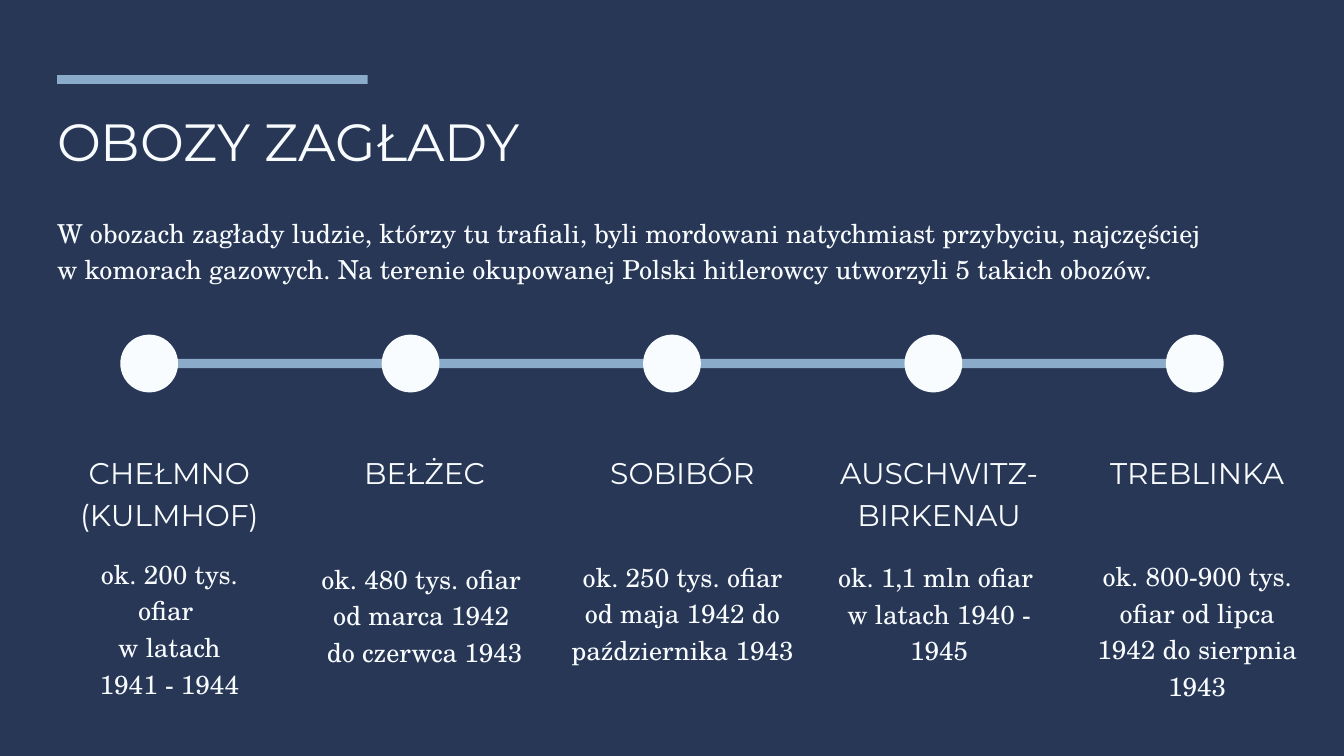
from pptx import Presentation
from pptx.dml.color import RGBColor
from pptx.enum.shapes import MSO_SHAPE
from pptx.enum.text import MSO_ANCHOR, MSO_AUTO_SIZE, PP_ALIGN
from pptx.util import Inches, Pt

RECTANGLE = MSO_SHAPE.RECTANGLE
OVAL = MSO_SHAPE.OVAL
TOP = MSO_ANCHOR.TOP
NO_AUTOFIT = MSO_AUTO_SIZE.NONE
LEFT = PP_ALIGN.LEFT
CENTER = PP_ALIGN.CENTER

COLOURS = {"navy": "273755", "white": "F9FCFF", "blue": "8AABCA"}
HEADING_FONT = "Montserrat"
BODY_FONT = "TeX Gyre Schola"
TITLE_ONLY = 5

MARGIN = 0.85
FIRST_DOT, DOT_STEP, DOT_SIZE = 2.22, 3.89, 0.86
LINE_CENTRE, LINE_HEIGHT = 5.41, 0.14
NAME_TOP = 6.68
DETAIL_SHARE = 0.866

INTRO = [
    "W obozach zagłady ludzie, którzy tu trafiali, byli mordowani natychmiast przybyciu, najczęściej",
    "w komorach gazowych. Na terenie okupowanej Polski hitlerowcy utworzyli 5 takich obozów.",
]

CAMPS = [
    (0.85, 3.34, 8.23, ["CHEŁMNO", "(KULMHOF)"],
     ["ok. 200 tys. ofiar ", "w latach", "1941 - 1944"]),
    (4.38, 3.88, 8.3, ["BEŁŻEC"],
     ["ok. 480 tys. ofiar ", "od marca 1942 ", "do czerwca 1943"]),
    (8.21, 3.89, 8.27, ["SOBIBÓR"],
     ["ok. 250 tys. ofiar od maja 1942 do października 1943"]),
    (12.1, 3.75, 8.28, ["AUSCHWITZ-BIRKENAU"],
     ["ok. 1,1 mln ofiar ", "w latach 1940 - 1945"]),
    (15.98, 3.67, 8.26, ["TREBLINKA"],
     ["ok. 800-900 tys. ofiar od lipca 1942 do sierpnia 1943"]),
]


def colour(name):
    return RGBColor.from_string(COLOURS[name])


def write_text(box, lines, size=28, font=BODY_FONT, align=LEFT, spacing=1.4):
    frame = box.text_frame
    frame.word_wrap = True
    frame.auto_size = NO_AUTOFIT
    frame.vertical_anchor = TOP
    frame.margin_left = frame.margin_right = 0
    frame.margin_top = frame.margin_bottom = 0
    for index, line in enumerate(lines):
        para = frame.paragraphs[0] if index == 0 else frame.add_paragraph()
        para.alignment = align
        para.line_spacing = Pt(size * spacing)
        span = para.add_run()
        span.text = line
        span.font.size = Pt(size)
        span.font.name = font
        span.font.color.rgb = colour("white")


def add_text(page, left, top, width, height, lines, **style):
    box = page.shapes.add_textbox(
        Inches(left), Inches(top), Inches(width), Inches(height))
    write_text(box, lines, **style)


def add_title(page, text):
    title = page.shapes.title
    title.left, title.top = Inches(MARGIN), Inches(1.63)
    title.width, title.height = Inches(14.84), Inches(0.94)
    write_text(title, [text], size=56, font=HEADING_FONT, spacing=1.2)


def add_solid(page, kind, left, top, width, height, fill):
    shape = page.shapes.add_shape(
        kind, Inches(left), Inches(top), Inches(width), Inches(height))
    shape.shadow.inherit = False
    shape.fill.solid()
    shape.fill.fore_color.rgb = colour(fill)
    shape.line.fill.background()


def add_timeline(page, count):
    add_solid(page, RECTANGLE, FIRST_DOT, LINE_CENTRE - LINE_HEIGHT / 2,
              DOT_STEP * (count - 1), LINE_HEIGHT, "blue")
    for index in range(count):
        centre = FIRST_DOT + index * DOT_STEP
        add_solid(page, OVAL, centre - DOT_SIZE / 2, LINE_CENTRE - DOT_SIZE / 2,
                  DOT_SIZE, DOT_SIZE, "white")


def add_camp(page, left, width, detail_top, name, details):
    add_text(page, left, NAME_TOP, width, 1.19, name,
             size=32, font=HEADING_FONT, align=CENTER)
    detail_width = width * DETAIL_SHARE
    add_text(page, left + (width - detail_width) / 2, detail_top,
             detail_width, 1.62, details, align=CENTER)


def main():
    deck = Presentation()
    deck.slide_width, deck.slide_height = Inches(20), Inches(11.25)
    page = deck.slides.add_slide(deck.slide_layouts[TITLE_ONLY])
    page.background.fill.solid()
    page.background.fill.fore_color.rgb = colour("navy")

    add_solid(page, RECTANGLE, MARGIN, 1.12, 4.62, 0.13, "blue")
    add_title(page, "OBOZY ZAGŁADY")
    add_text(page, MARGIN, 3.15, 17.98, 1.07, INTRO)
    add_timeline(page, len(CAMPS))
    for camp in CAMPS:
        add_camp(page, *camp)

    deck.save("out.pptx")


if __name__ == "__main__":
    main()
